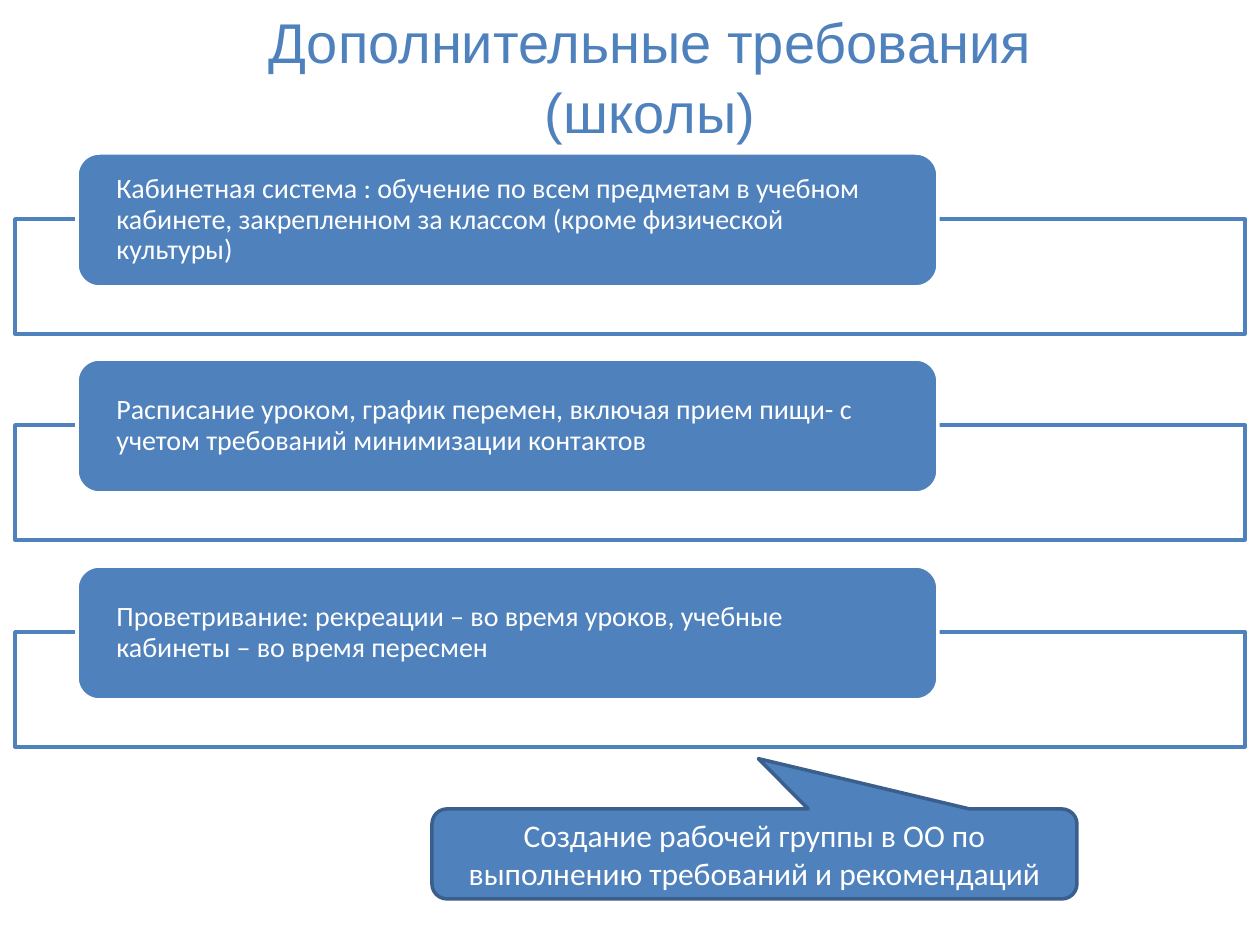
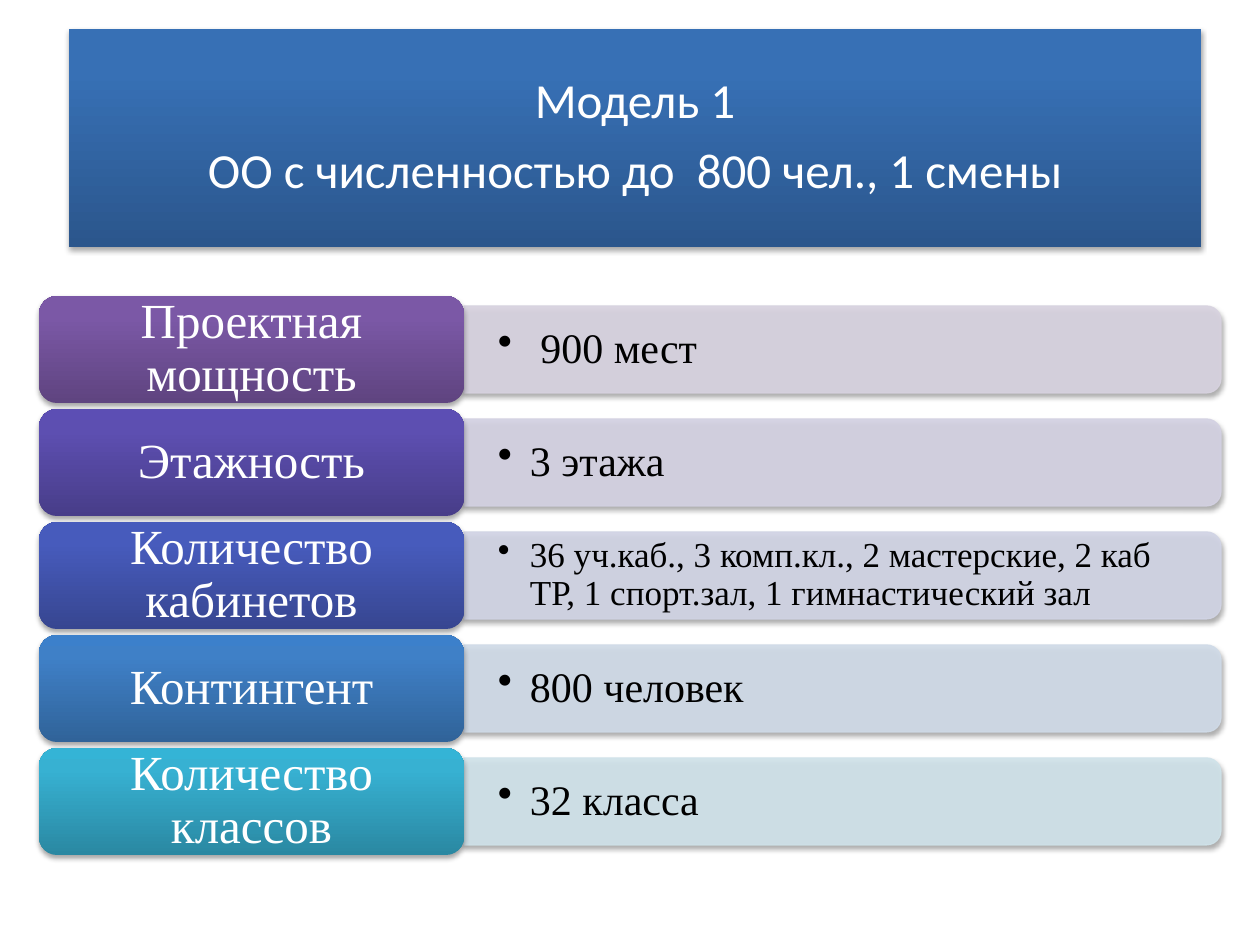
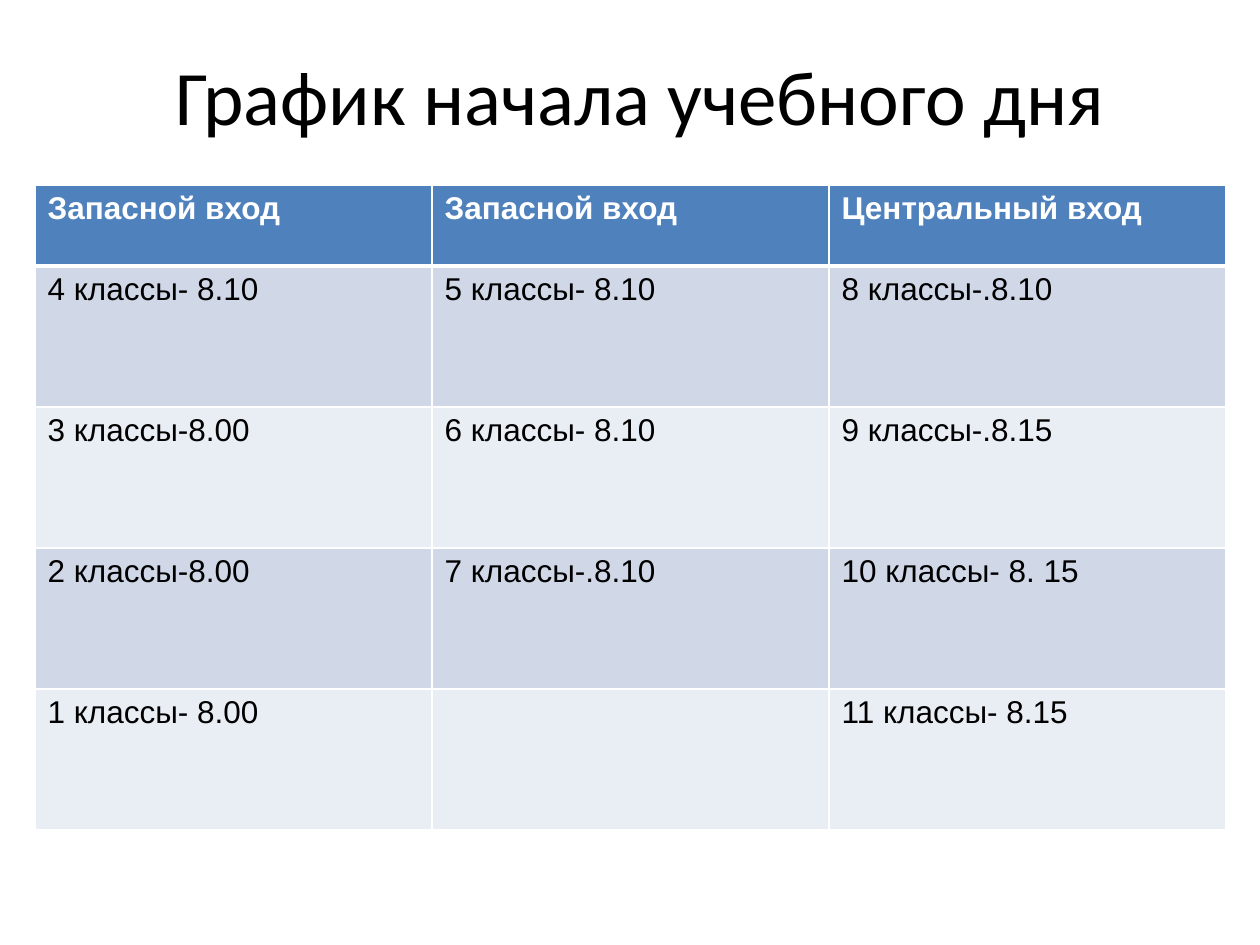
import copy

import pptx
import pptx.dml.color
import pptx.enum.shapes
import pptx.enum.text
import pptx.oxml.ns
import pptx.util
from lxml import etree

RGB = pptx.dml.color.RGBColor
SHAPE = pptx.enum.shapes.MSO_SHAPE
ALIGN = pptx.enum.text.PP_ALIGN
ANCHOR = pptx.enum.text.MSO_ANCHOR
Pt = pptx.util.Pt
qn = pptx.oxml.ns.qn

PX_PER_INCH = 126
WHITE = RGB(0xFF, 0xFF, 0xFF)
BLACK = RGB(0x00, 0x00, 0x00)
BLUE = RGB(0x4F, 0x81, 0xBD)
DARK_BLUE = RGB(0x3A, 0x5F, 0x8C)
ROW_FILLS = [RGB(0xD0, 0xD8, 0xE8), RGB(0xE9, 0xED, 0xF4)]
BANNER_STOPS = [RGB(0x2B, 0x56, 0x8C), RGB(0x37, 0x70, 0xB5), RGB(0x35, 0x70, 0xB8)]
STOP_POSITIONS = [0, 0.8, 1]

REQUIREMENTS_TITLE = ["Дополнительные требования", "(школы)"]
REQUIREMENTS = [
    "Кабинетная система : обучение по всем предметам в учебном кабинете, "
    "закрепленном за классом (кроме физической культуры)",
    "Расписание уроком, график перемен, включая прием пищи- с учетом "
    "требований минимизации контактов",
    "Проветривание: рекреации – во время уроков, учебные кабинеты – во время пересмен",
]
CALLOUT = "Создание рабочей группы в ОО по выполнению требований и рекомендаций"

MODEL_TITLE = ["Модель 1", "ОО с численностью до  800 чел., 1 смены"]
MODEL_ROWS = [
    ("Проектная мощность", " 900 мест", 24, RGB(0xD8, 0xD3, 0xE0),
     [RGB(0x5F, 0x44, 0x80), RGB(0x7B, 0x58, 0xA6), RGB(0x7C, 0x57, 0xA8)]),
    ("Этажность", "3 этажа", 24, RGB(0xD4, 0xD2, 0xE3),
     [RGB(0x48, 0x3D, 0x89), RGB(0x5D, 0x4F, 0xB1), RGB(0x5C, 0x4E, 0xB4)]),
    ("Количество кабинетов",
     "36 уч.каб., 3 комп.кл., 2 мастерские, 2 каб ТР, 1 спорт.зал, 1 гимнастический зал",
     20, RGB(0xD1, 0xD4, 0xE5),
     [RGB(0x37, 0x46, 0x91), RGB(0x47, 0x5B, 0xBC), RGB(0x45, 0x5A, 0xBF)]),
    ("Контингент", "800 человек", 24, RGB(0xD0, 0xDB, 0xE8),
     [RGB(0x30, 0x63, 0x99), RGB(0x3F, 0x80, 0xC7), RGB(0x3C, 0x80, 0xCB)]),
    ("Количество классов", "32 класса", 24, RGB(0xD0, 0xE3, 0xEA),
     [RGB(0x2A, 0x88, 0xA2), RGB(0x37, 0xB1, 0xD2), RGB(0x34, 0xB4, 0xD6)]),
]

SCHEDULE_TITLE = ["График начала учебного дня"]
SCHEDULE = [
    ["Запасной вход", "Запасной вход", "Центральный вход"],
    ["4 классы- 8.10", "5 классы- 8.10", "8 классы-.8.10"],
    ["3 классы-8.00", "6 классы- 8.10", "9 классы-.8.15"],
    ["2 классы-8.00", "7 классы-.8.10", "10 классы- 8. 15"],
    ["1 классы- 8.00", "", "11 классы- 8.15"],
]


def px(n):
    return pptx.util.Emu(round(n * 914400 / PX_PER_INCH))


def write(tf, texts, size, font="Calibri", color=WHITE, bold=False, align=ALIGN.LEFT,
          anchor=ANCHOR.MIDDLE, spacing=None, after=0, insets=(13, 6), bullet=False):
    tf.word_wrap = True
    tf.auto_size = pptx.enum.text.MSO_AUTO_SIZE.NONE
    tf.vertical_anchor = anchor
    tf.margin_left = tf.margin_right = px(insets[0])
    tf.margin_top = tf.margin_bottom = px(insets[1])
    for i, text in enumerate(texts):
        p = tf.add_paragraph() if i else tf.paragraphs[0]
        p.alignment = align
        p.line_spacing = spacing
        p.space_after = Pt(after)
        if bullet:
            pPr = p._p.get_or_add_pPr()
            pPr.set("marL", str(px(32)))
            pPr.set("indent", str(-px(32)))
            etree.SubElement(pPr, qn("a:buChar"), char="•")
        r = p.add_run()
        r.text = text
        r.font.size = Pt(size)
        r.font.name = font
        r.font.bold = bold
        r.font.color.rgb = color


def add_title(slide, box, texts, size, **fmt):
    sp = slide.shapes.title
    sp.left, sp.top, sp.width, sp.height = map(px, box)
    write(sp.text_frame, texts, size, align=ALIGN.CENTER, **fmt)
    return sp


def add_box(slide, kind, box, fill=None, line=None, width=2):
    sp = slide.shapes.add_shape(kind, *map(px, box))
    sp.shadow.inherit = False
    if fill is not None:
        sp.fill.solid()
        sp.fill.fore_color.rgb = fill
    if line is None:
        sp.line.fill.background()
    else:
        sp.line.color.rgb = line
        sp.line.width = Pt(width)
    return sp


def set_alpha(parent, percent):
    for clr in parent.iter(qn("a:srgbClr")):
        etree.SubElement(clr, qn("a:alpha"), val=str(percent * 1000))


def add_gradient(sp, colors):
    sp.fill.gradient()
    sp.fill.gradient_angle = 90
    stops = sp._element.spPr.find(".//" + qn("a:gsLst"))
    stops.append(copy.deepcopy(stops[0]))
    for stop, position, color in zip(sp.fill.gradient_stops, STOP_POSITIONS, colors):
        stop.position = position
        stop.color.rgb = color


def add_shadow(sp):
    sp.shadow.inherit = False
    effects = sp._element.spPr.find(qn("a:effectLst"))
    shadow = etree.SubElement(effects, qn("a:outerShdw"), blurRad=str(Pt(3.1)),
                              dist=str(Pt(1.8)), dir="5400000", rotWithShape="0")
    etree.SubElement(shadow, qn("a:srgbClr"), val="000000")
    set_alpha(shadow, 35)


def add_border(cell, side, points):
    ln = etree.SubElement(cell._tc.get_or_add_tcPr(), qn("a:ln" + side), w=str(Pt(points)))
    fill = etree.SubElement(ln, qn("a:solidFill"))
    etree.SubElement(fill, qn("a:srgbClr"), val=str(WHITE))


def build_requirements(slide):
    add_title(slide, (253, 0, 794, 149), REQUIREMENTS_TITLE, 32,
              font="Arial", color=BLUE, spacing=1.04)
    for i, text in enumerate(REQUIREMENTS):
        top = 153 + round(i * 206.5)
        frame = add_box(slide, SHAPE.RECTANGLE, (15, top + 66, 1230, 115), WHITE)
        set_alpha(frame._element.spPr, 90)
        frame.line.color.rgb = BLUE
        frame.line.width = Pt(2)
        card = add_box(slide, SHAPE.ROUNDED_RECTANGLE, (77, top, 861, 134), BLUE, WHITE)
        write(card.text_frame, [text], 16, spacing=0.9, insets=(33, 0))
    callout = add_box(slide, SHAPE.ROUNDED_RECTANGULAR_CALLOUT, (432, 809, 645, 90),
                      BLUE, DARK_BLUE)
    for i, value in enumerate([0.006, -1.059, 0.167]):
        callout.adjustments[i] = value
    write(callout.text_frame, [CALLOUT], 18, align=ALIGN.CENTER)


def build_model(slide):
    banner = add_title(slide, (69, 29, 1132, 218), MODEL_TITLE, 28,
                       spacing=0.9, after=9.8, insets=(15, 15))
    add_gradient(banner, BANNER_STOPS)
    add_shadow(banner)
    left, width, height = 464, 757, 87
    for i, (label, value, size, tint, stops) in enumerate(MODEL_ROWS):
        top = 296 + i * 113
        box = (left, top + 10, width, height)
        shift = (width - height) / 2
        panel = add_box(slide, SHAPE.ROUND_2_SAME_RECTANGLE,
                        (left + shift, top + 10 - shift, height, width), tint, tint, 0.75)
        panel.rotation = 90
        set_alpha(panel._element.spPr, 90)
        add_shadow(panel)
        tb = slide.shapes.add_textbox(*map(px, box))
        write(tb.text_frame, [value], size, font="Times New Roman", color=BLACK,
              spacing=0.9, insets=(34, 4), bullet=True)
        tag = add_box(slide, SHAPE.ROUNDED_RECTANGLE, (39, top, 425, 107))
        add_gradient(tag, stops)
        add_shadow(tag)
        write(tag.text_frame, [label], 28, font="Times New Roman", align=ALIGN.CENTER,
              spacing=0.9, insets=(15, 8))


def build_schedule(slide):
    add_title(slide, (84, 42, 1113, 100), SCHEDULE_TITLE, 44, color=BLACK, anchor=ANCHOR.TOP)
    heights = [81] + [141] * (len(SCHEDULE) - 1)
    columns = len(SCHEDULE[0])
    table = slide.shapes.add_table(len(SCHEDULE), columns, px(35), px(185),
                                   px(397 * columns), px(sum(heights))).table
    for column in table.columns:
        column.width = px(397)
    for i, texts in enumerate(SCHEDULE):
        table.rows[i].height = px(heights[i])
        for j, text in enumerate(texts):
            cell = table.cell(i, j)
            for side in "LRTB":
                thick = (i, side) in [(0, "B"), (1, "T")]
                add_border(cell, side, 3 if thick else 1)
            cell.fill.solid()
            cell.fill.fore_color.rgb = ROW_FILLS[(i - 1) % 2] if i else BLUE
            if text:
                write(cell.text_frame, [text], 18, font="Arial", bold=i == 0,
                      color=BLACK if i else WHITE, anchor=ANCHOR.TOP)


def main():
    prs = pptx.Presentation()
    prs.slide_width, prs.slide_height = px(1260), px(945)
    for build in (build_requirements, build_model, build_schedule):
        build(prs.slides.add_slide(prs.slide_layouts[5]))
    prs.save("out.pptx")


if __name__ == "__main__":
    main()
